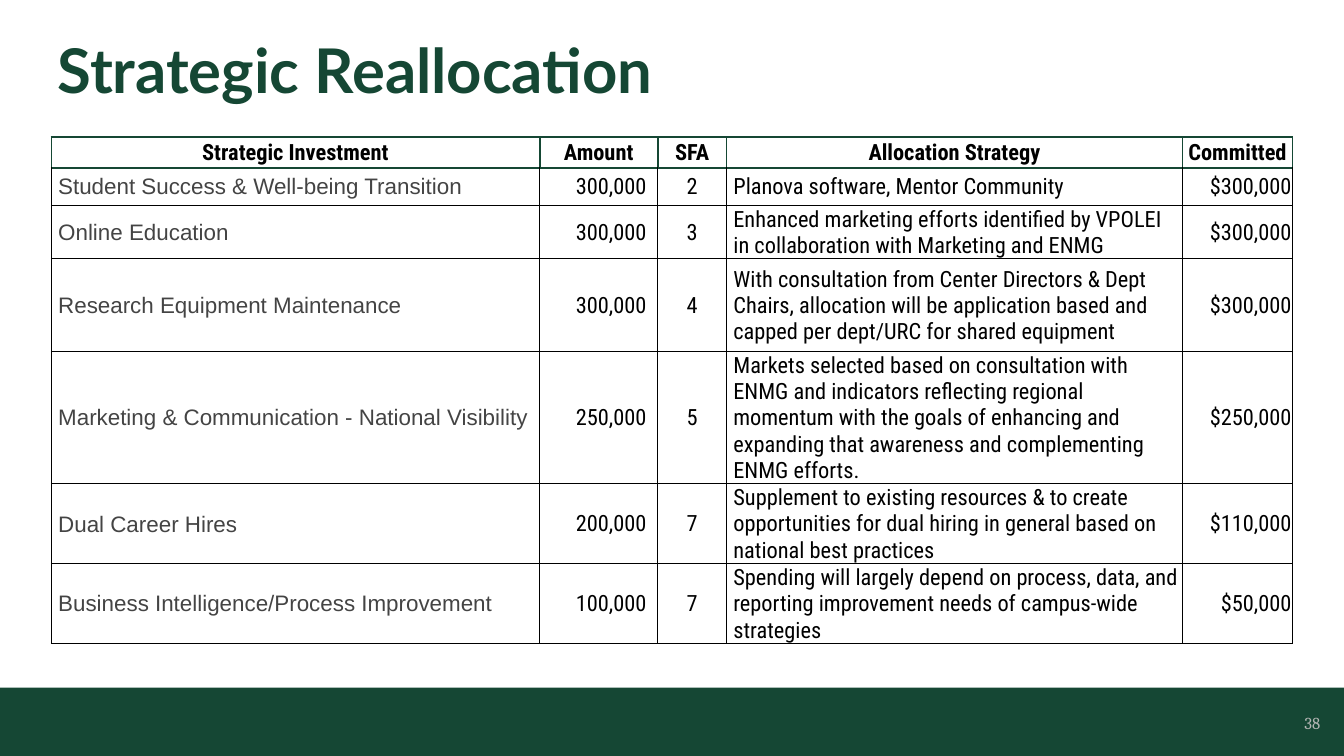
from lxml.etree import SubElement
from pptx import Presentation
from pptx.dml.color import RGBColor
from pptx.enum.shapes import MSO_SHAPE
from pptx.enum.text import MSO_ANCHOR, PP_ALIGN
from pptx.oxml.ns import qn
from pptx.util import Cm, Pt

GREEN, BLACK, GRAY, SILVER = "154734", "000000", "444444", "B2B4B2"
LEFT, CENTER, RIGHT = PP_ALIGN.LEFT, PP_ALIGN.CENTER, PP_ALIGN.RIGHT


def color(value):
    return RGBColor.from_string(value)


def set_values(target, values):
    for name, value in values.items():
        setattr(target, name, value)


class SlideBuilder:
    body = {"name": "Roboto Condensed", "size": Pt(12), "bold": False}

    def __init__(self, page):
        self.page = page

    def add_words(self, frame, text, font, ink, align=LEFT, spacing=None):
        para = frame.paragraphs[0]
        set_values(para, {"alignment": align, "line_spacing": spacing})
        span = para.add_run()
        span.text = text
        set_values(span.font, font)
        span.font.color.rgb = color(ink)

    def band(self, left, top, width, height, fill):
        box = self.page.shapes.add_shape(
            MSO_SHAPE.RECTANGLE, Cm(left), Cm(top), Cm(width), Cm(height))
        box.shadow.inherit = False
        box.fill.solid()
        box.fill.fore_color.rgb = color(fill)
        box.line.fill.background()

    def text(self, left, top, width, height, text, font, ink, frame_values, **layout):
        box = self.page.shapes.add_textbox(Cm(left), Cm(top), Cm(width), Cm(height))
        set_values(box.text_frame, {"word_wrap": True, **frame_values})
        self.add_words(box.text_frame, text, font, ink, **layout)

    def border(self, cell, edges):
        properties = cell._tc.get_or_add_tcPr()
        for position, (side, (ink, width)) in enumerate(edges.items()):
            line = SubElement(properties, qn(f"a:{side}"), w=str(Pt(width)))
            properties.remove(line)
            properties.insert(position, line)
            fill = SubElement(line, qn("a:solidFill"))
            SubElement(fill, qn("a:srgbClr"), val=ink)

    def table(self, left, top, widths, heights, header, rows, columns):
        frame = self.page.shapes.add_table(
            len(heights), len(widths), Cm(left), Cm(top),
            Cm(sum(widths)), Cm(sum(heights)))
        grid = frame.table
        set_values(grid, {"first_row": False, "horz_banding": False})
        for column, width in zip(grid.columns, widths):
            column.width = Cm(width)
        for row, height in zip(grid.rows, heights):
            row.height = Cm(height)

        green_line, black_line = (GREEN, 1), (BLACK, 0.5)
        for i, texts in enumerate([header, *rows]):
            edges = dict.fromkeys(("lnL", "lnR", "lnT", "lnB"),
                                  black_line if i else green_line)
            if i == 1:
                edges["lnT"] = green_line
            for j, text in enumerate(texts):
                cell = grid.cell(i, j)
                style = columns[j] if i else {"font": {"bold": True}, "align": CENTER}
                set_values(cell, {
                    "vertical_anchor": MSO_ANCHOR.MIDDLE,
                    "margin_left": Cm(style.get("left", 0.02)),
                    "margin_right": Cm(style.get("right", 0.02)),
                    "margin_top": Cm(0.02), "margin_bottom": Cm(0)})
                cell.fill.background()
                self.border(cell, edges)
                self.add_words(cell.text_frame, text,
                               {**self.body, **style.get("font", {})},
                               style.get("ink", BLACK), style.get("align", LEFT))


def main():
    deck = Presentation()
    deck.slide_width, deck.slide_height = Cm(25.4), Cm(14.29)
    builder = SlideBuilder(deck.slides.add_slide(deck.slide_layouts[6]))

    # Footer band
    builder.band(-0.1, 13, 25.5, 1.3, GREEN)

    # Investment table
    header = ["Strategic Investment", "Amount", "SFA", "Allocation Strategy", "Committed"]
    rows = [
        ["Student Success & Well-being Transition", "300,000", "2",
         "Planova software, Mentor Community", "$300,000"],
        ["Online Education", "300,000", "3",
         "Enhanced marketing efforts identified by VPOLEI in collaboration with "
         "Marketing and ENMG", "$300,000"],
        ["Research Equipment Maintenance", "300,000", "4",
         "With consultation from Center Directors & Dept Chairs, allocation will be "
         "application based and capped per dept/URC for shared equipment", "$300,000"],
        ["Marketing & Communication - National Visibility", "250,000", "5",
         "Markets selected based on consultation with ENMG and indicators reflecting "
         "regional momentum with the goals of enhancing and expanding that awareness "
         "and complementing ENMG efforts.", "$250,000"],
        ["Dual Career Hires", "200,000", "7",
         "Supplement to existing resources & to create opportunities for dual hiring "
         "in general based on national best practices", "$110,000"],
        ["Business Intelligence/Process Improvement", "100,000", "7",
         "Spending will largely depend on process, data, and reporting improvement "
         "needs of campus-wide strategies", "$50,000"],
    ]
    columns = [
        {"left": 0.13, "font": {"name": "Arial"}, "ink": GRAY},
        {"right": 0.21, "align": RIGHT},
        {"align": CENTER},
        {"left": 0.13},
        {"align": RIGHT},
    ]
    builder.table(0.97, 2.59, [9.23, 2.23, 1.3, 8.62, 2.08],
                  [0.58, 0.71, 0.71, 1.75, 2.31, 1.17, 1.17], header, rows, columns)

    # Title
    no_margins = dict.fromkeys(
        ("margin_left", "margin_top", "margin_right", "margin_bottom"), Cm(0))
    builder.text(1.09, 0.76, 23.22, 1.12, "Strategic Reallocation",
                 {"name": "Lato", "size": Pt(33), "bold": True}, GREEN,
                 no_margins, spacing=0.9)

    # Page number
    builder.text(23.7, 13.28, 1.5, 0.76, "38", {"name": "Cambria", "size": Pt(9)},
                 SILVER, {"vertical_anchor": MSO_ANCHOR.MIDDLE}, align=RIGHT)

    deck.save("out.pptx")


if __name__ == "__main__":
    main()
